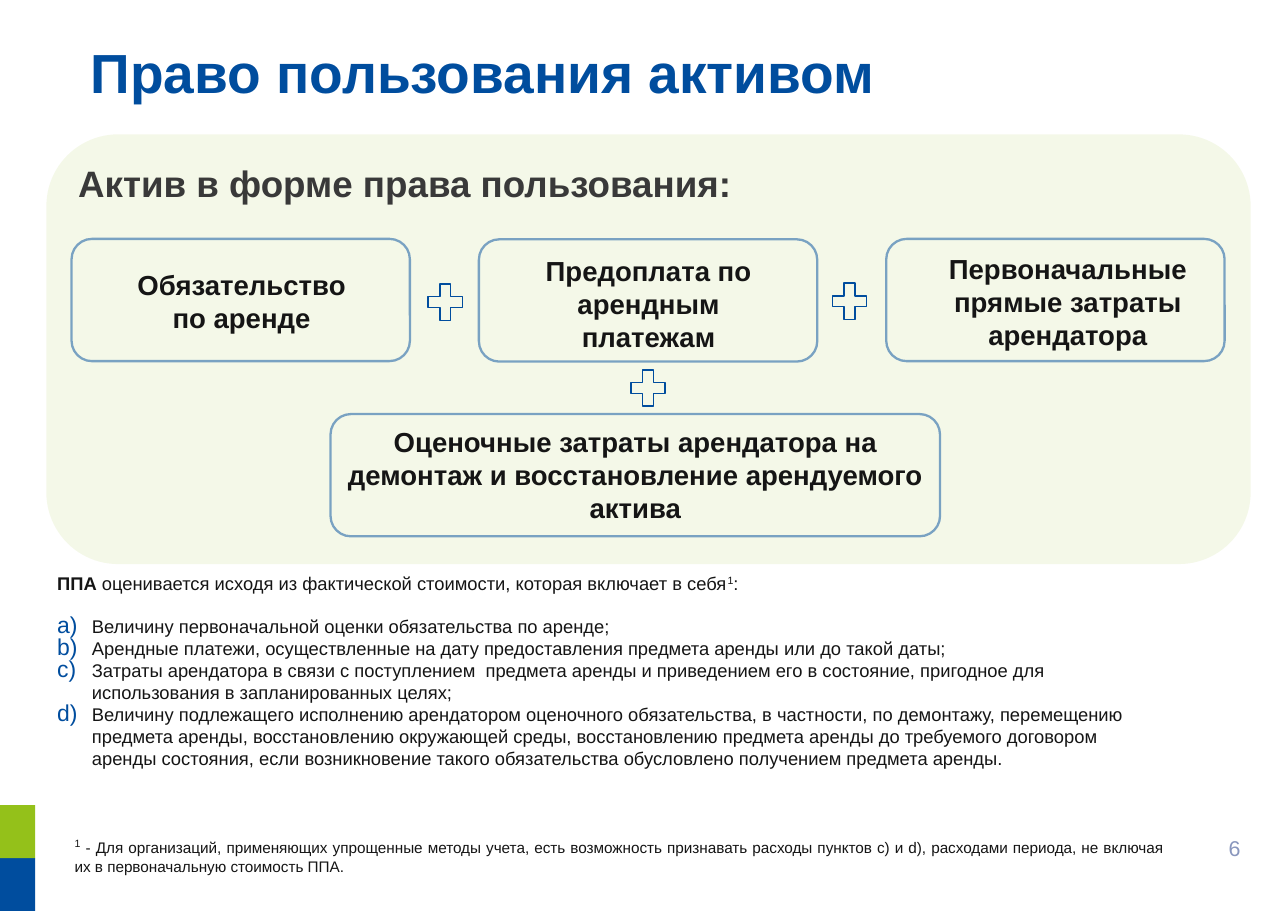
from lxml import etree
from pptx import Presentation
from pptx.dml.color import RGBColor
from pptx.enum.shapes import MSO_SHAPE
from pptx.enum.text import MSO_ANCHOR, MSO_AUTO_SIZE, PP_ALIGN
from pptx.oxml.ns import qn
from pptx.util import Cm, Pt

RECT, ROUND = MSO_SHAPE.RECTANGLE, MSO_SHAPE.ROUNDED_RECTANGLE
PLUS = MSO_SHAPE.MATH_PLUS
TOP, MIDDLE = MSO_ANCHOR.TOP, MSO_ANCHOR.MIDDLE
LEFT, CENTER, RIGHT = PP_ALIGN.LEFT, PP_ALIGN.CENTER, PP_ALIGN.RIGHT
JUSTIFY = PP_ALIGN.JUSTIFY
FIXED = MSO_AUTO_SIZE.NONE

BLUE, GREEN, LIME = "004D9E", "94C11A", "97C026"
DARK, GRAY, PALE = "151515", "393939", "8996BD"

deck = Presentation()
deck.slide_width, deck.slide_height = Cm(29.69), Cm(21.01)
slide = deck.slides.add_slide(deck.slide_layouts[5])
shapes = slide.shapes


def draw(kind, box, fill=None, line=None, width=1, alpha=100):
    """Add a preset shape; box is left, top, width, height in cm."""
    shape = shapes.add_shape(kind, *map(Cm, box))
    shape.shadow.inherit = False
    for paint, color in ((shape.fill, fill), (shape.line.fill, line)):
        if color:
            paint.solid()
            paint.fore_color.rgb = RGBColor.from_string(color)
        else:
            paint.background()
    if line:
        shape.line.width = Pt(width)
    if alpha < 100:
        for tint in shape._element.spPr.iter(qn("a:srgbClr")):
            etree.SubElement(tint, qn("a:alpha")).set("val", str(alpha * 1000))
    return shape


def write(shape, paras, size, color=DARK, bold=False, align=LEFT):
    """Fill a shape; each paragraph lists runs as text, or (text, format)."""
    frame = shape.text_frame
    frame.word_wrap = True
    frame.auto_size = FIXED
    frame.vertical_anchor = TOP
    for i, runs in enumerate(paras):
        para = frame.add_paragraph() if i else frame.paragraphs[0]
        para.alignment = align
        for item in runs:
            text, look = (item, {}) if isinstance(item, str) else item
            run = para.add_run()
            run.text = text
            font = run.font
            font.name = "Arial"
            font.size = Pt(look.get("size", size))
            font.bold = look.get("bold", bold)
            font.color.rgb = RGBColor.from_string(color)
            if look.get("super"):
                run._r.get_or_add_rPr().set("baseline", "30000")
    return frame


# Corner blocks and panel
for top, color in ((19.79, BLUE), (18.57, GREEN)):
    draw(RECT, (0, top, 0.81, 1.22), color)
panel = draw(ROUND, (1.07, 3.1, 27.76, 9.91), LIME, alpha=10)
write(panel, [["Актив в форме права пользования:"]], 24, GRAY, True)

# Title
title = shapes.title
title.left, title.top, title.width, title.height = map(Cm, (2.06, 1.07, 23.65, 1.35))
frame = write(title, [["Право пользования активом"]], 36, BLUE, True)
frame.vertical_anchor = MIDDLE
frame.margin_left = Cm(0.03)
frame.margin_right = frame.margin_top = frame.margin_bottom = 0
frame.paragraphs[0].line_spacing = Pt(38)

# Body with lettered list
body = shapes.add_textbox(Cm(1.07), Cm(13.06), Cm(25.58), Cm(5.38))
lead = [
    ("ППА", {"bold": True}),
    " оценивается исходя из фактической стоимости, которая включает в себя",
    ("1", {"super": True}),
    ":",
]
items = [
    "Величину первоначальной оценки обязательства по аренде;",
    "Арендные платежи, осуществленные на дату предоставления предмета аренды или до такой даты;",
    "Затраты арендатора в связи с поступлением  предмета аренды и приведением его "
    "в состояние, пригодное для использования в запланированных целях;",
    "Величину подлежащего исполнению арендатором оценочного обязательства, в частности, "
    "по демонтажу, перемещению предмета аренды, восстановлению окружающей среды, "
    "восстановлению предмета аренды до требуемого договором аренды состояния, если "
    "возникновение такого обязательства обусловлено получением предмета аренды.",
]
frame = write(body, [lead] + [[item] for item in items], 12)
frame.paragraphs[0].space_after = Pt(14)
for para in frame.paragraphs[1:]:
    props = para._p.get_or_add_pPr()
    props.set("marL", str(Cm(0.8)))
    props.set("indent", str(Cm(-0.8)))
    tint = etree.SubElement(props, qn("a:buClr"))
    etree.SubElement(tint, qn("a:srgbClr")).set("val", BLUE)
    etree.SubElement(props, qn("a:buSzPct")).set("val", "125000")
    etree.SubElement(props, qn("a:buFont")).set("typeface", "Arial")
    etree.SubElement(props, qn("a:buAutoNum")).set("type", "alphaLcParenR")

# Page number and footnote
page = shapes.add_textbox(Cm(26.49), Cm(19.13), Cm(2.36), Cm(1.12))
write(page, [["6"]], 14, PALE, align=RIGHT)
note = shapes.add_textbox(Cm(1.47), Cm(19.13), Cm(25.58), Cm(1.12))
remark = [
    ("1", {"size": 12, "super": True}),
    " - Для организаций, применяющих упрощенные методы учета, есть возможность признавать "
    "расходы пунктов c) и d), расходами периода, не включая их в первоначальную стоимость ППА.",
]
write(note, [remark], 10, align=JUSTIFY).paragraphs[0].space_after = Pt(6)

# Parts of the sum: frame box, label box, label lines
parts = [
    ((1.65, 5.51, 7.8, 2.82), (2.74, 6.05, 5.66, 1.8),
     ["Обязательство", "по аренде"]),
    ((11.04, 5.52, 7.8, 2.82), (12.12, 5.74, 5.66, 2.57),
     ["Предоплата по", "арендным", "платежам"]),
    ((20.43, 5.51, 7.8, 2.82), (21.01, 5.69, 7.21, 2.57),
     ["Первоначальные", "прямые затраты", "арендатора"]),
    ((7.62, 9.55, 14.05, 2.82), (7.62, 9.68, 14.05, 2.57),
     ["Оценочные затраты арендатора на демонтаж и восстановление арендуемого актива"]),
]
for box, area, lines in parts:
    draw(ROUND, box, line=BLUE, width=1.5, alpha=50)
    label = shapes.add_textbox(*map(Cm, area))
    write(label, [[line] for line in lines], 18, bold=True, align=CENTER)

for left, top in ((9.73, 6.4), (19.05, 6.38), (14.4, 8.38)):
    draw(PLUS, (left, top, 1.07, 1.14), line=BLUE)

deck.save("out.pptx")
